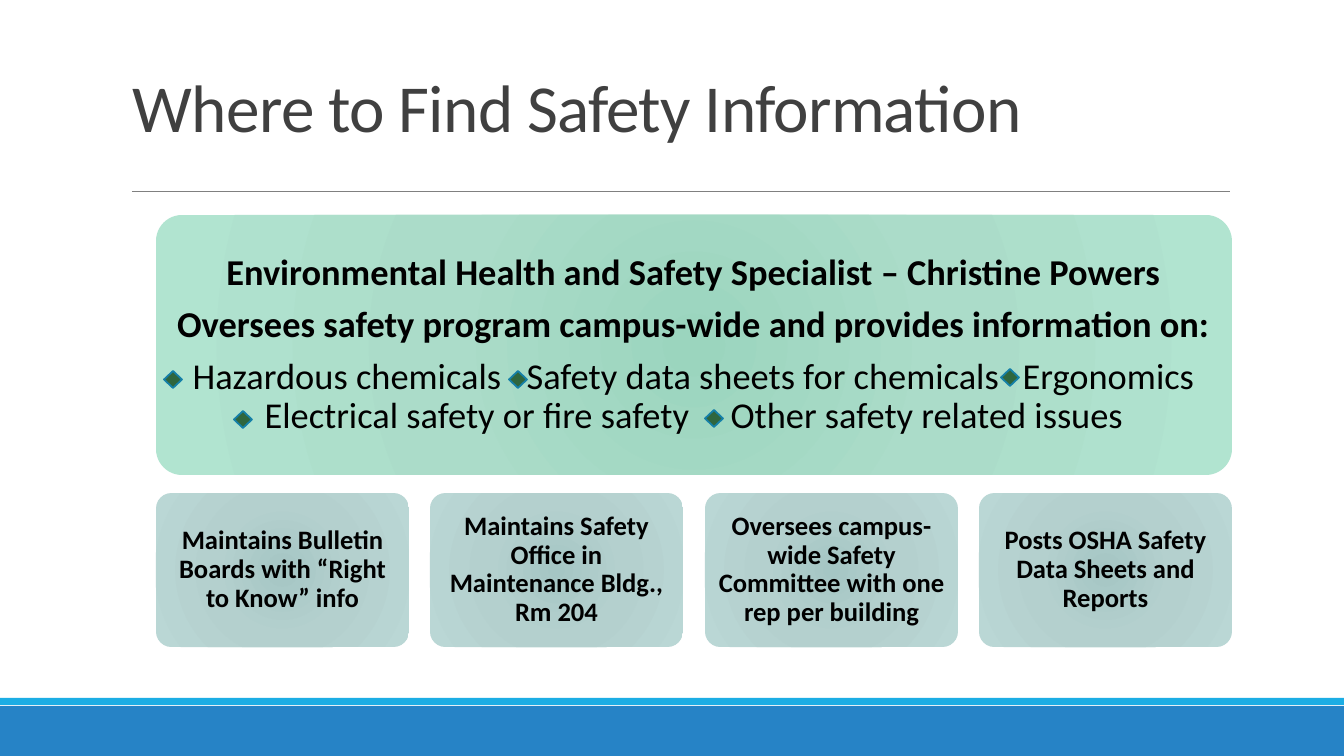
import pptx
import pptx.dml.color
import pptx.enum.shapes
import pptx.enum.text
import pptx.oxml
import pptx.oxml.ns
import pptx.util

RGBColor = pptx.dml.color.RGBColor
Shapes = pptx.enum.shapes.MSO_SHAPE
Align = pptx.enum.text.PP_ALIGN
Anchor = pptx.enum.text.MSO_ANCHOR

BLUE = RGBColor(0x26, 0x83, 0xC6)
CYAN = RGBColor(0x1C, 0xAD, 0xE4)
GRAY = RGBColor(0x80, 0x80, 0x80)
CHARCOAL = RGBColor(0x40, 0x40, 0x40)
BLACK = RGBColor(0, 0, 0)
DIAMOND_GREEN = RGBColor(0x2F, 0x66, 0x3E)
DIAMOND_EDGE = RGBColor(0x15, 0x80, 0xA9)
MINT = (RGBColor(0x9B, 0xD5, 0xBE), RGBColor(0xAB, 0xDC, 0xC9), RGBColor(0xB1, 0xE4, 0xD0))
SAGE = (RGBColor(0xA5, 0xC6, 0xC4), RGBColor(0xB4, 0xD0, 0xCE), RGBColor(0xBA, 0xD7, 0xD5))

WIDTH, HEIGHT = 1344, 756
PANEL_LEFT, PANEL_WIDTH = 156, 1076
CARD_WIDTH = 253
TEXT_LEFT = 174


def px(length):
    """Turn whole pixels into EMU."""
    return pptx.util.Emu(round(length * 914400 / 100.8))


class SafetySlide:
    """Holds the text style and the slide being built."""

    font = "Calibri"

    def __init__(self, slide):
        """Keep the slide to draw on."""
        self.slide = slide

    def shape(self, kind, left, top, width, height, fill, edge=None):
        """Add a plain filled shape."""
        shape = self.slide.shapes.add_shape(kind, px(left), px(top), px(width), px(height))
        shape.shadow.inherit = False
        shape.fill.solid()
        shape.fill.fore_color.rgb = fill
        if edge is None:
            shape.line.fill.background()
        else:
            shape.line.color.rgb = edge
            shape.line.width = pptx.util.Pt(1.25)
        return shape

    def rule(self, left, right, y):
        """Add the thin line under the title."""
        line = self.slide.shapes.add_connector(
            pptx.enum.shapes.MSO_CONNECTOR.STRAIGHT, px(left), px(y), px(right), px(y))
        line.line.color.rgb = GRAY
        line.line.width = pptx.util.Pt(0.5)
        line._element.spPr.append(pptx.oxml.parse_xml(
            f'<a:effectLst {pptx.oxml.ns.nsdecls("a")}/>'))

    def style_text(self, paragraph, text, size, color=BLACK, bold=False, spacing=0.9):
        """Fill a paragraph and format its runs."""
        paragraph.text = text
        paragraph.line_spacing = spacing
        for run in paragraph.runs:
            run.font.name = self.font
            run.font.size = pptx.util.Pt(size)
            run.font.bold = bold
            run.font.color.rgb = color

    def title(self, text, left, top, width, height):
        """Add the slide title."""
        box = self.slide.shapes.add_textbox(px(left), px(top), px(width), px(height))
        frame = box.text_frame
        frame.word_wrap = True
        frame.vertical_anchor = Anchor.BOTTOM
        self.style_text(frame.paragraphs[0], text, 48, CHARCOAL, spacing=0.85)
        for run in frame.paragraphs[0].runs:
            run._r.get_or_add_rPr().set("spc", "-50")

    def card(self, left, top, width, height, shades, inset, lines, size):
        """Add a rounded card with a radial gradient and bold centred lines."""
        card = self.shape(Shapes.ROUNDED_RECTANGLE, left, top, width, height, shades[0])
        card.adjustments[0] = 0.1
        stops = "".join(
            f'<a:gs pos="{position}"><a:srgbClr val="{shade}"/></a:gs>'
            for position, shade in zip((0, 45000, 100000), shades))
        gradient = pptx.oxml.parse_xml(
            f'<a:gradFill {pptx.oxml.ns.nsdecls("a")} rotWithShape="1"><a:gsLst>{stops}</a:gsLst>'
            '<a:path path="circle"><a:fillToRect l="100000" t="100000" r="100000" b="100000"/>'
            '</a:path></a:gradFill>')
        properties = card._element.spPr
        properties.replace(properties.find(pptx.oxml.ns.qn("a:solidFill")), gradient)
        frame = card.text_frame
        frame.word_wrap = True
        frame.vertical_anchor = Anchor.MIDDLE
        frame.margin_left = frame.margin_right = px(inset)
        frame.margin_top = frame.margin_bottom = px(inset)
        for index, line in enumerate(lines):
            paragraph = frame.paragraphs[0] if index == 0 else frame.add_paragraph()
            self.style_text(paragraph, line, size, bold=True)
            paragraph.alignment = Align.CENTER
        return frame

    def topic_row(self, frame, topics, diamond_tops):
        """Add one line of topics on tab stops, each behind its diamond."""
        paragraph = frame.add_paragraph()
        self.style_text(paragraph, "".join("\t" + name for name, _, _ in topics), 26)
        paragraph.alignment = Align.LEFT
        tabs = "".join(
            f'<a:tab pos="{px(text_left - TEXT_LEFT)}" algn="l"/>' for _, text_left, _ in topics)
        paragraph._p.get_or_add_pPr().append(pptx.oxml.parse_xml(
            f'<a:tabLst {pptx.oxml.ns.nsdecls("a")}>{tabs}</a:tabLst>'))
        for (_, _, diamond_left), top in zip(topics, diamond_tops):
            self.shape(Shapes.FLOWCHART_DECISION, diamond_left, top, 18, 17,
                       DIAMOND_GREEN, DIAMOND_EDGE)


def main():
    """Build and save the safety information slide."""
    deck = pptx.Presentation()
    deck.slide_width, deck.slide_height = px(WIDTH), px(HEIGHT)
    page = SafetySlide(deck.slides.add_slide(deck.slide_layouts[6]))

    page.shape(Shapes.RECTANGLE, 0, 706, WIDTH, 50, BLUE)
    page.shape(Shapes.RECTANGLE, 0, 698, WIDTH, 7, CYAN)
    page.rule(132, 1230, 191)
    page.title("Where to Find Safety Information", 123, 54, 1109, 97)

    specialist = page.card(
        PANEL_LEFT, 215, PANEL_WIDTH, 260, MINT, 11,
        ["Environmental Health and Safety Specialist – Christine Powers",
         "Oversees safety program campus-wide and provides information on:"], 26)
    for heading in specialist.paragraphs:
        heading.space_after = pptx.util.Pt(9)
    page.topic_row(specialist, [
        ("Hazardous chemicals", 192, 164),
        ("Safety data sheets for chemicals", 526, 509),
        ("Ergonomics", 1022, 1001)], (371, 371, 369))
    page.topic_row(specialist, [
        ("Electrical safety or fire safety", 264, 234),
        ("Other safety related issues", 730, 705)], (411, 410))

    duties = [
        "Maintains Bulletin Boards with “Right to Know” info",
        "Maintains Safety Office in Maintenance Bldg., Rm 204",
        "Oversees campus-wide Safety\vCommittee with one rep per building",
        "Posts OSHA Safety Data Sheets and Reports",
    ]
    span = PANEL_WIDTH - CARD_WIDTH
    for index, duty in enumerate(duties):
        left = PANEL_LEFT + round(index * span / (len(duties) - 1))
        page.card(left, 493, CARD_WIDTH, 154, SAGE, 8, [duty], 19)

    deck.save("out.pptx")


if __name__ == "__main__":
    main()
